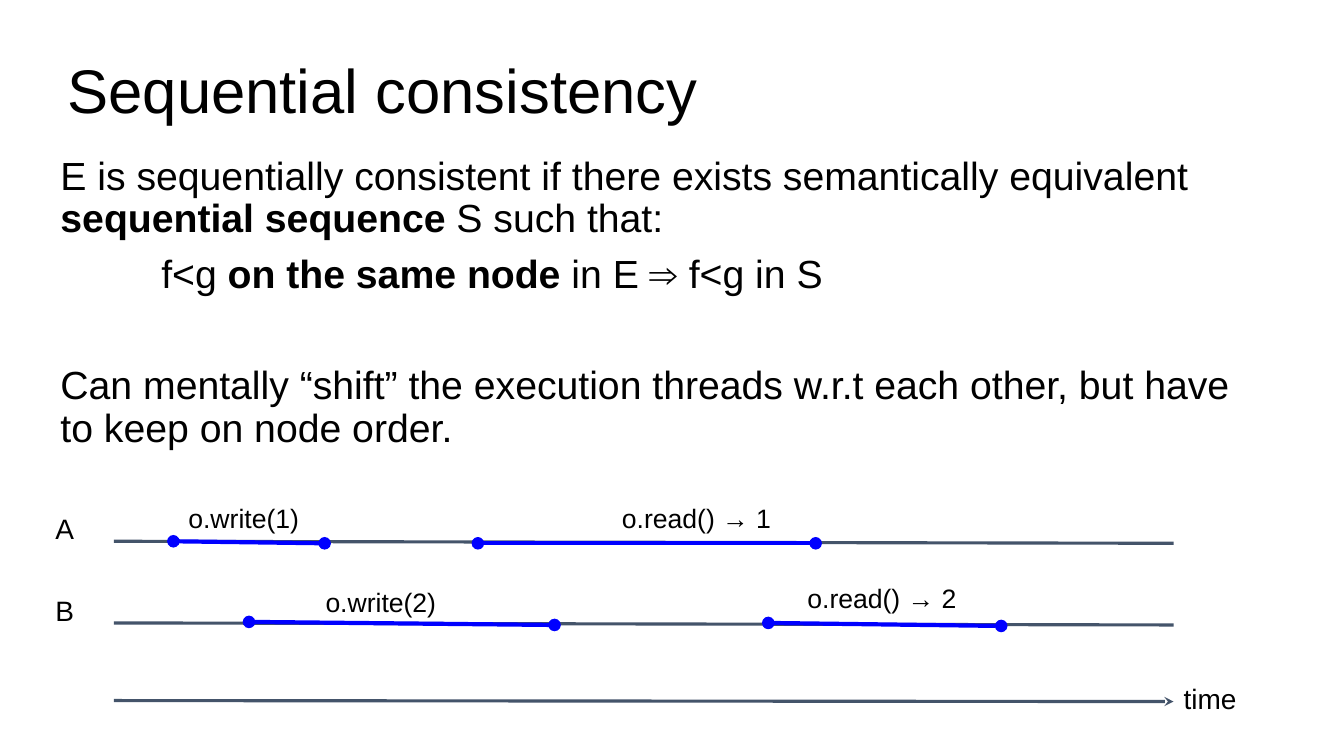
from lxml.etree import SubElement
from pptx import Presentation
from pptx.dml.color import RGBColor
from pptx.enum.shapes import MSO_CONNECTOR
from pptx.enum.text import MSO_ANCHOR
from pptx.oxml.ns import qn
from pptx.util import Inches, Pt

COLORS = {"text": "000000", "axis": "44546A", "operation": "0000FF"}

deck = Presentation()
deck.slide_width, deck.slide_height = Inches(13.33), Inches(7.5)
slide = deck.slides.add_slide(deck.slide_layouts[6])


def add_text(left, top, width, height, paragraphs, size, inset=0.1):
    """Add a text box; each paragraph is a list of (text, bold) runs."""
    box = slide.shapes.add_textbox(*map(Inches, (left, top, width, height)))
    frame = box.text_frame
    frame.word_wrap = True
    frame.margin_left = frame.margin_right = Inches(inset)
    frame.margin_top = frame.margin_bottom = Inches(inset)
    for index, runs in enumerate(paragraphs):
        paragraph = frame.paragraphs[0] if index == 0 else frame.add_paragraph()
        for text, bold in runs:
            run = paragraph.add_run()
            run.text = text
            run.font.name, run.font.size, run.font.bold = "Arial", Pt(size), bold
            run.font.color.rgb = RGBColor.from_string(COLORS["text"])
    return frame


def add_line(start, end, color, width, head=None, tail=None):
    line = slide.shapes.add_connector(
        MSO_CONNECTOR.STRAIGHT, *map(Inches, (*start, *end)))
    line.line.color.rgb = RGBColor.from_string(COLORS[color])
    line.line.width = Pt(width)
    for tag, kind in (("a:headEnd", head), ("a:tailEnd", tail)):
        if kind:
            SubElement(line.line._ln, qn(tag), type=kind)
    SubElement(line._element.spPr, qn("a:effectLst"))


# Title and definition
title = add_text(0.67, 0.3, 12, 1.25, [[("Sequential consistency", False)]], 44, inset=0)
title.vertical_anchor = MSO_ANCHOR.MIDDLE
title.paragraphs[0].line_spacing = 0.9

definition = add_text(0.6, 1.55, 12, 3.14, [
    [("E is sequentially consistent if there exists semantically equivalent ", False),
     ("sequential sequence ", True), ("S such that:", False)],
    [("f<g ", False), ("on the same node", True), (" in E ⇒ f<g in S", False)],
    [("Can mentally “shift” the execution threads w.r.t each other, "
      "but have to keep on node order.", False)],
], 28, inset=0)
for paragraph, space in zip(definition.paragraphs, (0, 10, 49)):
    paragraph.line_spacing = 0.9
    if space:
        paragraph.space_before = Pt(space)
condition = definition.paragraphs[1]._p.get_or_add_pPr()
condition.set("marL", str(Inches(0.5)))
condition.set("indent", str(Inches(0.5)))

# Node timelines and the time axis
axis_left, axis_right = 1.13, 11.64
for start_y, end_y, arrow in ((5.37, 5.39, None), (6.18, 6.2, None),
                              (6.95, 6.96, "stealth")):
    add_line((axis_left, start_y), (axis_right, end_y), "axis", 2.25, tail=arrow)

# Operations: interval start, interval end, label, label place and width
operations = [
    ((1.72, 5.37), (3.22, 5.39), "o.write(1)", (1.77, 4.88), 1.41),
    ((4.74, 5.39), (8.09, 5.39), "o.read() → 1", (6.07, 4.88), 1.87),
    ((2.47, 6.17), (5.5, 6.2), "o.write(2)", (3.13, 5.71), 1.41),
    ((7.62, 6.18), (9.93, 6.21), "o.read() → 2", (7.91, 5.67), 1.73),
]
for start, end, call, place, width in operations:
    add_line(start, end, "operation", 3, head="oval", tail="oval")
    add_text(*place, width, 0.52, [[(call, False)]], 19)

for name, left, top, width in (("A", 0.45, 4.97, 0.57), ("B", 0.45, 5.79, 0.57),
                               ("time", axis_right, 6.66, 1.09)):
    add_text(left, top, width, 0.54, [[(name, False)]], 20)

deck.save("out.pptx")
